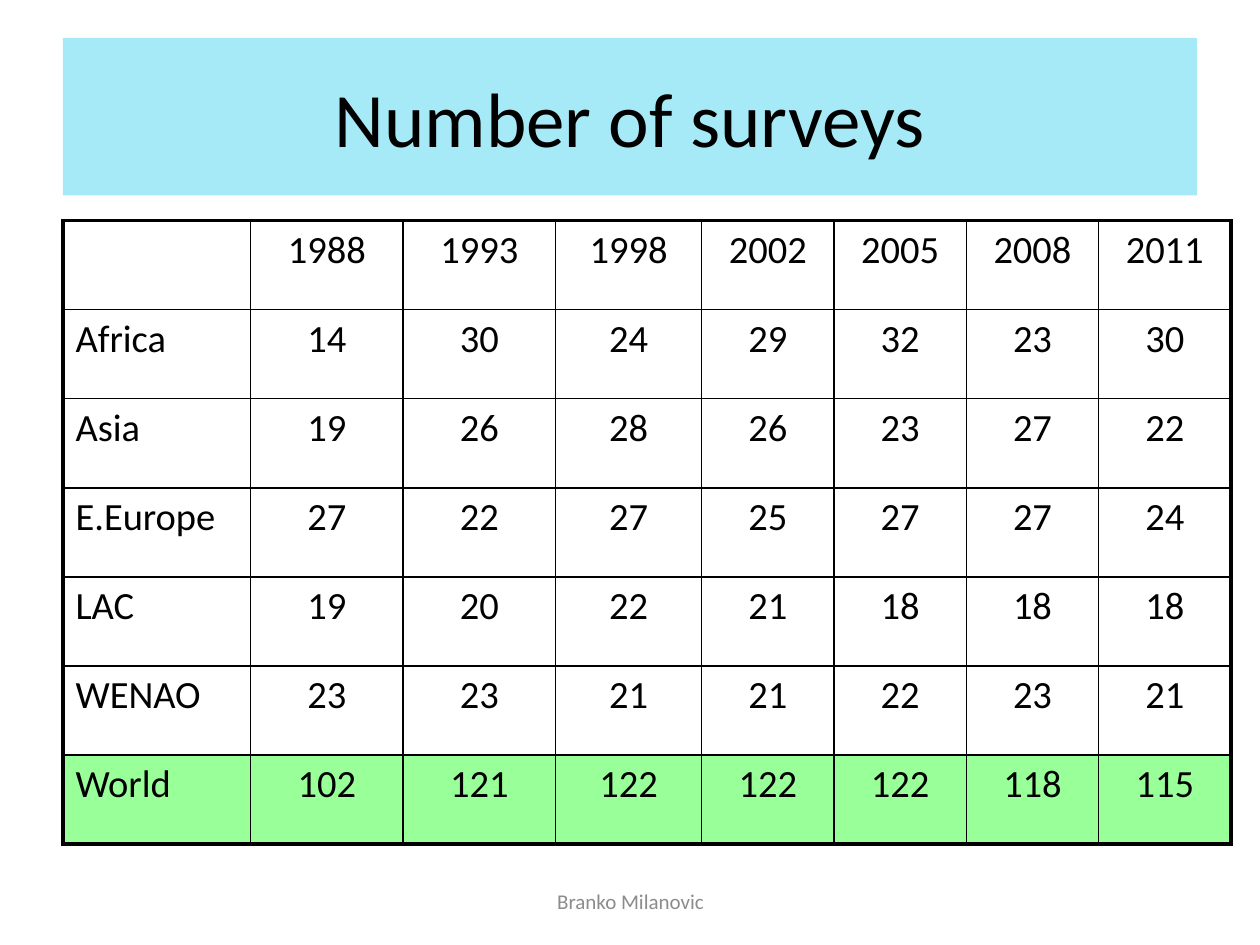
from lxml import etree
from pptx import Presentation
from pptx.dml.color import RGBColor
from pptx.enum.shapes import MSO_SHAPE
from pptx.enum.text import MSO_ANCHOR, PP_ALIGN
from pptx.oxml.ns import qn
from pptx.util import Inches, Pt

RECTANGLE = MSO_SHAPE.RECTANGLE
MIDDLE = MSO_ANCHOR.MIDDLE
LEFT, CENTER = PP_ALIGN.LEFT, PP_ALIGN.CENTER

FONT = "Calibri"
COLORS = {
    "text": "000000",
    "border": "000000",
    "title": "A6EAF8",
    "body": "FFFFFF",
    "total": "99FF99",
    "footer": "8C8C8C",
}
INNER_BORDER, OUTER_BORDER = 1, 2.25

COLUMN_WIDTHS = [1.49, 1.21, 1.21, 1.16] + [1.05] * 4
ROW_HEIGHT = 4.95 / 7
SURVEYS = [
    ["", 1988, 1993, 1998, 2002, 2005, 2008, 2011],
    ["Africa", 14, 30, 24, 29, 32, 23, 30],
    ["Asia", 19, 26, 28, 26, 23, 27, 22],
    ["E.Europe", 27, 22, 27, 25, 27, 27, 24],
    ["LAC", 19, 20, 22, 21, 18, 18, 18],
    ["WENAO", 23, 23, 21, 21, 22, 23, 21],
    ["World", 102, 121, 122, 122, 122, 118, 115],
]


def color(name):
    return RGBColor.from_string(COLORS[name])


def write_text(text_frame, text, size, align=CENTER, font_color="text"):
    paragraph = text_frame.paragraphs[0]
    paragraph.alignment = align
    paragraph.font.size = Pt(size)
    if text:
        run = paragraph.add_run()
        run.text = text
        run.font.name = FONT
        run.font.size = Pt(size)
        run.font.color.rgb = color(font_color)


def add_title(slide, text):
    shape = slide.shapes.add_shape(
        RECTANGLE, Inches(0.5), Inches(0.3), Inches(9), Inches(1.25))
    shape.shadow.inherit = False
    shape.fill.solid()
    shape.fill.fore_color.rgb = color("title")
    shape.line.fill.background()
    shape.text_frame.word_wrap = True
    shape.text_frame.vertical_anchor = MIDDLE
    write_text(shape.text_frame, text, size=44)


def add_footer(slide, text):
    box = slide.shapes.add_textbox(
        Inches(3.42), Inches(6.95), Inches(3.17), Inches(0.4))
    box.text_frame.word_wrap = True
    box.text_frame.vertical_anchor = MIDDLE
    write_text(box.text_frame, text, size=12, font_color="footer")


def set_borders(cell, outer_sides):
    """Draw all four sides, the ones in outer_sides thicker."""
    properties = cell._tc.get_or_add_tcPr()
    for position, side in enumerate("LRTB"):
        width = OUTER_BORDER if side in outer_sides else INNER_BORDER
        line = etree.Element(qn(f"a:ln{side}"), w=str(Pt(width)))
        fill = etree.SubElement(line, qn("a:solidFill"))
        etree.SubElement(fill, qn("a:srgbClr"), val=COLORS["border"])
        properties.insert(position, line)


def add_survey_table(slide):
    row_count, column_count = len(SURVEYS), len(COLUMN_WIDTHS)
    table = slide.shapes.add_table(
        row_count, column_count, Inches(0.5), Inches(1.75),
        Inches(sum(COLUMN_WIDTHS)), Inches(ROW_HEIGHT * row_count)).table
    table.horz_banding = False
    table.first_row = False
    for column, width in zip(table.columns, COLUMN_WIDTHS):
        column.width = Inches(width)
    for row_index, values in enumerate(SURVEYS):
        table.rows[row_index].height = Inches(ROW_HEIGHT)
        last_row = row_index == row_count - 1
        for column_index, value in enumerate(values):
            cell = table.cell(row_index, column_index)
            cell.fill.solid()
            cell.fill.fore_color.rgb = color("total" if last_row else "body")
            write_text(cell.text_frame, str(value), size=22,
                       align=CENTER if column_index else LEFT)
            edges = {
                "L": column_index == 0,
                "R": column_index == column_count - 1,
                "T": row_index == 0,
                "B": last_row,
            }
            set_borders(cell, [side for side in edges if edges[side]])


def main():
    presentation = Presentation()
    presentation.slide_width = Inches(10)
    presentation.slide_height = Inches(7.5)
    slide = presentation.slides.add_slide(presentation.slide_layouts[6])
    add_title(slide, "Number of surveys")
    add_survey_table(slide)
    add_footer(slide, "Branko Milanovic")
    presentation.save("out.pptx")


if __name__ == "__main__":
    main()
